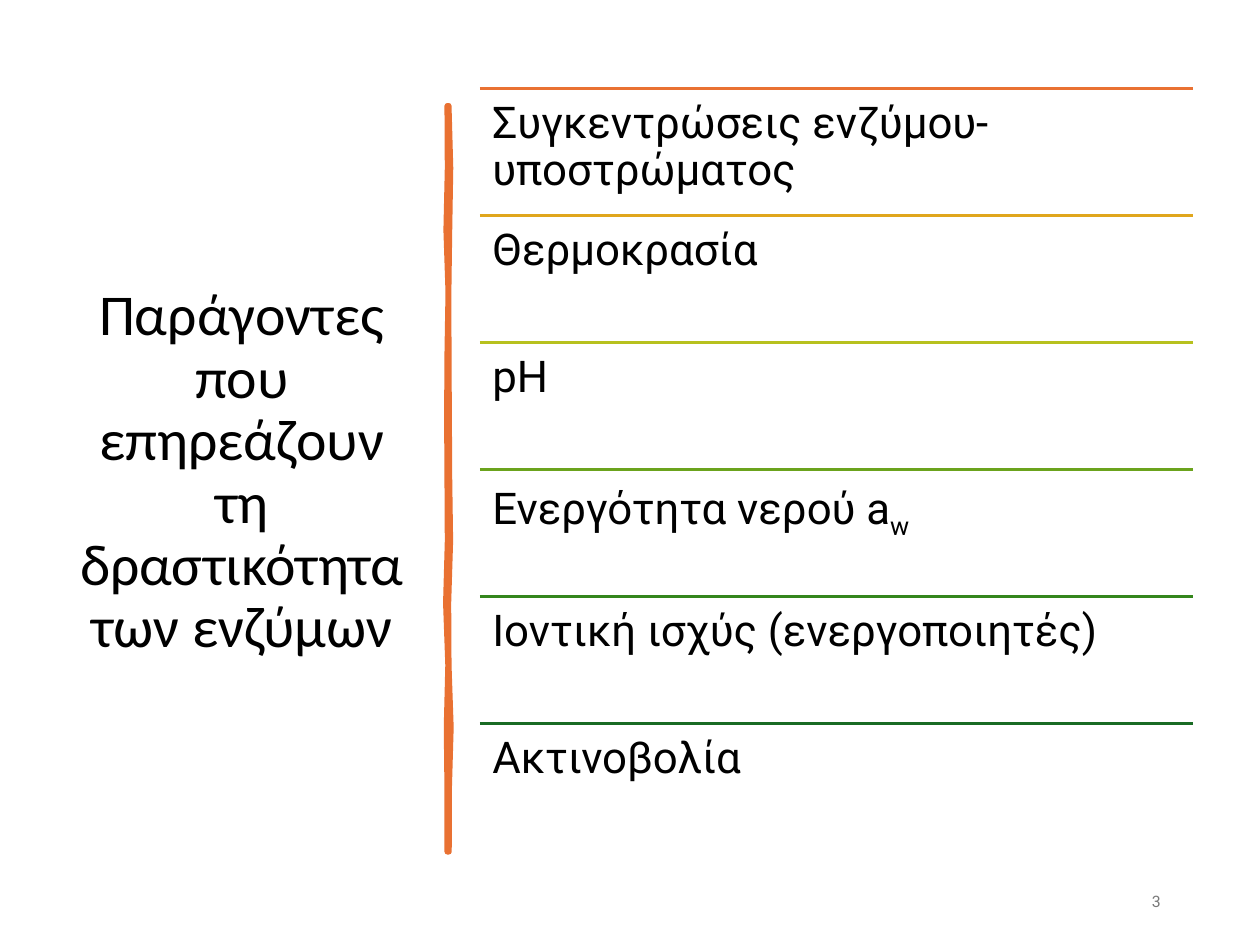
from lxml.etree import SubElement as Sub
from pptx import Presentation
from pptx.dml.color import RGBColor
from pptx.enum.shapes import MSO_CONNECTOR as Conn
from pptx.enum.text import MSO_ANCHOR as Anchor, PP_ALIGN as Align
from pptx.oxml.ns import qn
from pptx.util import Pt

ROWS = [
    ("Συγκεντρώσεις ενζύμου-υποστρώματος", "", "E97132"),
    ("Θερμοκρασία", "", "E0A61D"),
    ("pH", "", "B7C11E"),
    ("Ενεργότητα νερού a", "w", "6BA31D"),
    ("Ιοντική ισχύς (ενεργοποιητές)", "", "34861C"),
    ("Ακτινοβολία", "", "196B24"),
]
RIGHT = [0.4, 1.4, 0.8, 0.3, 0.4, 0.6, 0.8, 1.3, 0.2, 0.4, 1.6, 0.6, 0.5]
LEFT = [-0.4, -0.2, -1, 0.2, -0.4, -0.6, -0.4, -0.2, -1.2, 0.1, -0.8, -0.4, -0.4]


def paint(color, tint):
    """Set a hex colour on a colour format."""
    color.rgb = RGBColor.from_string(tint)


def write(slide, box, text, size, face="Roboto", tint="000000", align=Align.LEFT,
          anchor=Anchor.MIDDLE, lead=0.9):
    """Add a wrapped one-paragraph text box and return its frame."""
    frame = slide.shapes.add_textbox(*map(Pt, box)).text_frame
    frame.word_wrap = True
    frame.vertical_anchor = anchor
    para = frame.paragraphs[0]
    para.add_run().text = text
    para.alignment, para.line_spacing = align, lead
    para.font.size, para.font.name = Pt(size), face
    paint(para.font.color, tint)
    return frame


def add_bar(slide, box, tint):
    """Draw a hand-drawn upright bar centred in the box."""
    left, top, width, height = box
    mid, step = left + width / 2, height / (len(RIGHT) - 1)
    down = [(mid + dx, top + i * step) for i, dx in enumerate(RIGHT)]
    side = [(mid + dx, top + i * step) for i, dx in enumerate(LEFT)]
    first, *rest = [(Pt(x), Pt(y)) for x, y in down + side[::-1]]
    pen = slide.shapes.build_freeform(*first)
    pen.add_line_segments(rest, close=True)
    bar = pen.convert_to_shape()
    bar.shadow.inherit = False
    bar.fill.solid()
    paint(bar.fill.fore_color, tint)
    paint(bar.line.color, tint)
    bar.line.width = Pt(3.25)
    Sub(bar.line._get_or_add_ln(), qn("a:round"))


def add_row(slide, box, text, sub, tint):
    """Draw one ruled row with its text and optional subscript."""
    left, top, width, height = box
    rule = slide.shapes.add_connector(
        Conn.STRAIGHT, Pt(left), Pt(top), Pt(left + width), Pt(top))
    paint(rule.line.color, tint)
    rule.line.width = Pt(1.5)
    Sub(rule._element.spPr, qn("a:effectLst"))
    frame = write(slide, box, text, 25, anchor=Anchor.TOP)
    frame.margin_top = frame.margin_bottom = Pt(7.2)
    if sub:
        run = frame.paragraphs[0].add_run()
        run.text = sub
        run._r.get_or_add_rPr().set("baseline", "-25000")


def add_list(slide, box):
    """Stack the rows evenly in the box."""
    left, top, width, height = box
    step = height / len(ROWS)
    for i, row in enumerate(ROWS):
        add_row(slide, (left, top + i * step, width, step), *row)


def main():
    """Build and save the slide."""
    deck = Presentation()
    deck.slide_width, deck.slide_height = Pt(720), Pt(540)
    slide = deck.slides.add_slide(deck.slide_layouts[6])
    write(slide, (37.4, 50.4, 201.6, 440),
          "Παράγοντες που επηρεάζουν τη δραστικότητα των ενζύμων",
          33, "Calibri", align=Align.CENTER)
    add_bar(slide, (254, 60.5, 4, 426.2), "E97132")
    write(slide, (508.3, 500.4, 162, 28.8), "3", 9, tint="797979",
          align=Align.RIGHT, lead=1)
    add_list(slide, (274.3, 50.4, 407.5, 435.6))
    deck.save("out.pptx")


if __name__ == "__main__":
    main()
